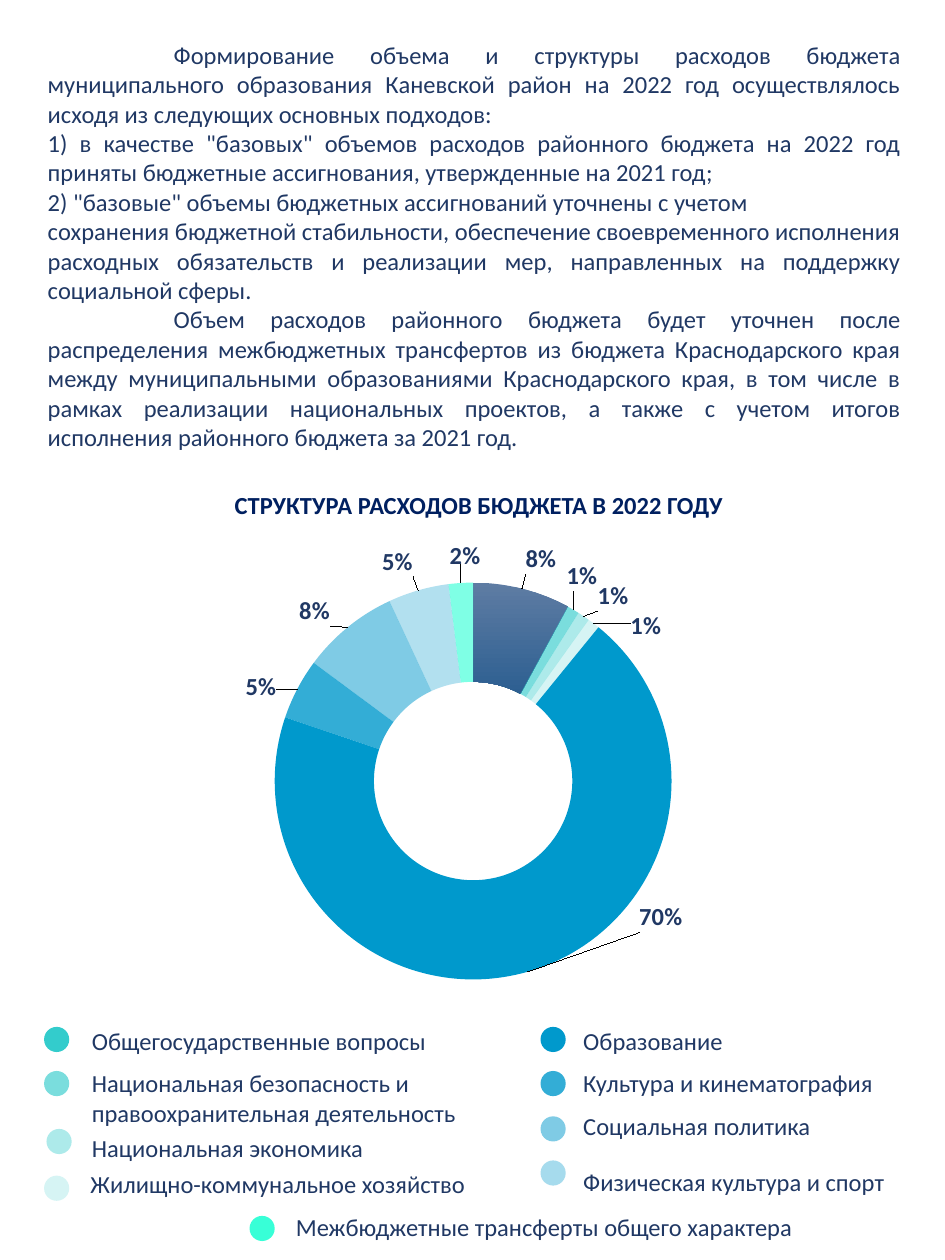
from math import cos, radians, sin

from lxml.etree import SubElement
from pptx import Presentation
from pptx.chart.data import CategoryChartData
from pptx.dml.color import RGBColor
from pptx.enum.chart import XL_CHART_TYPE
from pptx.enum.shapes import MSO_SHAPE
from pptx.enum.text import MSO_ANCHOR, PP_ALIGN
from pptx.oxml import parse_xml
from pptx.oxml.ns import nsdecls, qn
from pptx.util import Pt

NAVY, TEAL, BLUE, MINT = "203864", "33CCCC", "0099CC", "00FFCC"


def paint(fill, colour, alpha, root):
    """Fill solid; alpha is opacity in percent, root the XML element holding the fill."""
    fill.solid()
    fill.fore_color.rgb = RGBColor.from_string(colour)
    if alpha < 100:
        tint = next(root.iter(qn("a:srgbClr")))
        SubElement(tint, qn("a:alpha"), val=str(alpha * 1000))


def write(box, paragraphs, colour=NAVY, bold=False, **paragraph_format):
    """Add a 14 pt text box; box is left, top, width, height in points."""
    frame = slide.shapes.add_textbox(*map(Pt, box)).text_frame
    frame.word_wrap = True
    for number, words in enumerate(paragraphs):
        paragraph = frame.add_paragraph() if number else frame.paragraphs[0]
        run = paragraph.add_run()
        run.text = words
        run.font.color.rgb = RGBColor.from_string(colour)
        for key, value in {"name": "Calibri", "size": Pt(14), "bold": bold}.items():
            setattr(run.font, key, value)
        for key, value in paragraph_format.items():
            setattr(paragraph, key, value)
    return frame


deck = Presentation()
deck.slide_width, deck.slide_height = Pt(540), Pt(720)
slide = deck.slides.add_slide(deck.slide_layouts[6])

# Introduction
approach = write((20.2, 18, 501.8, 244.8), [
    "Формирование объема и структуры расходов бюджета муниципального образования "
    "Каневской район на 2022 год осуществлялось исходя из следующих основных подходов:",
    '1) в качестве "базовых" объемов расходов районного бюджета на 2022 год приняты '
    "бюджетные ассигнования, утвержденные на 2021 год;",
    '2) "базовые" объемы бюджетных ассигнований уточнены с учетом',
    "сохранения бюджетной стабильности, обеспечение своевременного исполнения расходных "
    "обязательств и реализации мер, направленных на поддержку социальной сферы.",
    "Объем расходов районного бюджета будет уточнен после распределения межбюджетных "
    "трансфертов из бюджета Краснодарского края между муниципальными образованиями "
    "Краснодарского края, в том числе в рамках реализации национальных проектов, а также "
    "с учетом итогов исполнения районного бюджета за 2021 год.",
], alignment=PP_ALIGN.JUSTIFY)
approach.vertical_anchor = MSO_ANCHOR.MIDDLE
for opening in (approach.paragraphs[0], approach.paragraphs[-1]):
    opening._p.get_or_add_pPr().set("indent", str(Pt(72)))

heading = write((23.8, 269.3, 499.7, 40.3), ["СТРУКТУРА РАСХОДОВ БЮДЖЕТА В 2022 ГОДУ"],
                "002060", True, alignment=PP_ALIGN.CENTER, line_spacing=0.9)
heading.vertical_anchor = MSO_ANCHOR.MIDDLE

# Doughnut: value, colour, opacity, compass angle of the label
shares = [
    (8, None, 100, 17),
    (1, TEAL, 65, 28),
    (1, TEAL, 40, 37),
    (1, TEAL, 20, 48),
    (70, BLUE, 100, 126),
    (5, BLUE, 80, 294),
    (8, BLUE, 50, 317),
    (5, BLUE, 30, 341),
    (2, MINT, 50, 358),
]
values = [share[0] for share in shares]
spending = CategoryChartData()
spending.categories = [str(number) for number in range(1, len(shares) + 1)]
spending.add_series("Series 1", values)
WIDTH, HEIGHT, RADIUS = 379.4, 253.4, 113.4
chart = slide.shapes.add_chart(XL_CHART_TYPE.DOUGHNUT, Pt(76.3), Pt(308.9),
                               Pt(WIDTH), Pt(HEIGHT), spending).chart
chart.has_legend = chart.has_title = False
chart.font.name, chart.font.size = "Calibri", Pt(18)
plot = chart.plots[0]
plot.vary_by_categories = True
chart.element.find(".//" + qn("c:holeSize")).set("val", "50")

plot_area = chart.element.find(".//" + qn("c:plotArea"))
for layout in plot_area.findall(qn("c:layout")):
    plot_area.remove(layout)
plot_area.insert(0, parse_xml(
    f'<c:layout {nsdecls("c")}><c:manualLayout><c:layoutTarget val="inner"/>'
    '<c:xMode val="edge"/><c:yMode val="edge"/><c:x val="0.145"/><c:y val="0.095"/>'
    '<c:w val="0.733"/><c:h val="0.895"/></c:manualLayout></c:layout>'))

RING, OUTSIDE = 0.75 * RADIUS, 1.17 * RADIUS
for number, (value, colour, alpha, angle) in enumerate(shares):
    point = plot.series[0].points[number]
    point.format.line.fill.background()
    fill = point.format.fill
    if colour:
        paint(fill, colour, alpha, chart.element.findall(".//" + qn("c:dPt"))[-1])
    else:
        fill.gradient()
        fill.gradient_angle = 270
        for stop, shade in zip(fill.gradient_stops, ("5E7CA3", "2D5F91")):
            stop.color.rgb = RGBColor.from_string(shade)

    font = point.data_label.font
    font.color.rgb = RGBColor.from_string(NAVY)
    for key, value_set in {"name": "Calibri", "size": Pt(14), "bold": True}.items():
        setattr(font, key, value_set)
    # Shift each label from the middle of its segment to just outside the ring
    middle = radians(360 * (sum(values[:number]) + value / 2) / sum(values))
    target = radians(angle)
    across = (OUTSIDE * sin(target) - RING * sin(middle)) / WIDTH
    down = (RING * cos(middle) - OUTSIDE * cos(target)) / HEIGHT
    label = chart.element.findall(".//" + qn("c:dLbl"))[-1]
    label.insert(1, parse_xml(
        f'<c:layout {nsdecls("c")}><c:manualLayout><c:x val="{across:.3f}"/>'
        f'<c:y val="{down:.3f}"/></c:manualLayout></c:layout>'))
    label.insert(2, parse_xml(
        f'<c:numFmt {nsdecls("c")} formatCode="0&quot;%&quot;" sourceLinked="0"/>'))

# Legend: dot left, dot top, colour, opacity, text left, text top, text width, words
legend = [
    (25.2, 586.8, TEAL, 100, 45.4, 582.5, 214, "Общегосударственные вопросы"),
    (25.2, 612, TEAL, 65, 45.4, 607, 272,
     "Национальная безопасность и правоохранительная деятельность"),
    (26.6, 645.1, TEAL, 40, 45.4, 643.7, 214, "Национальная экономика"),
    (25.2, 671.8, TEAL, 20, 44.6, 664.6, 238, "Жилищно-коммунальное хозяйство"),
    (308.9, 586.8, BLUE, 100, 326.2, 582.5, 194, "Образование"),
    (308.9, 612, BLUE, 80, 326.2, 607, 194, "Культура и кинематография"),
    (308.9, 637.9, BLUE, 50, 326.2, 631.4, 194, "Социальная политика"),
    (308.9, 663.1, BLUE, 35, 326.2, 663.1, 194, "Физическая культура и спорт"),
    (142.6, 694.8, MINT, 78, 162, 689, 338, "Межбюджетные трансферты общего характера"),
]
for left, top, colour, alpha, text_left, text_top, width, words in legend:
    dot = slide.shapes.add_shape(MSO_SHAPE.OVAL, Pt(left), Pt(top), Pt(14.4), Pt(14.4))
    dot.shadow.inherit = False
    dot.line.fill.background()
    paint(dot.fill, colour, alpha, dot.element)
    write((text_left, text_top, width, 24.5), [words])

deck.save("out.pptx")
